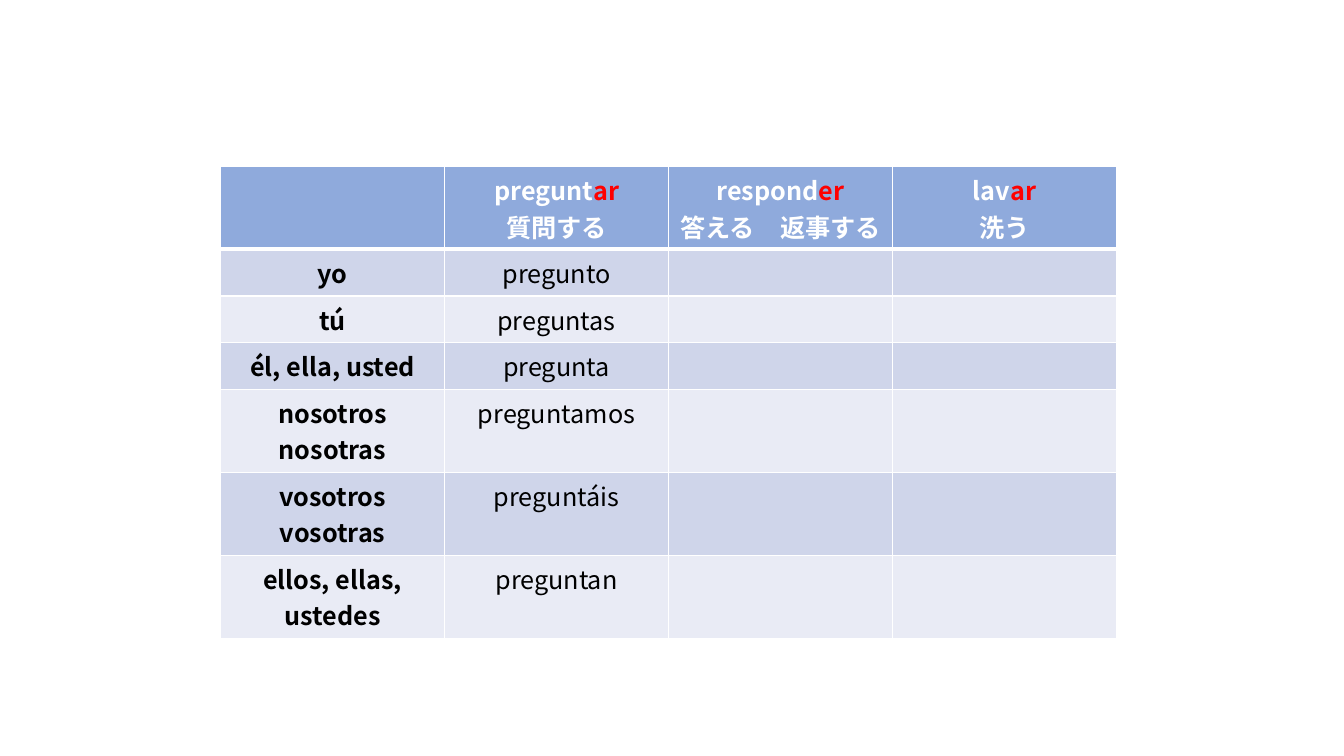
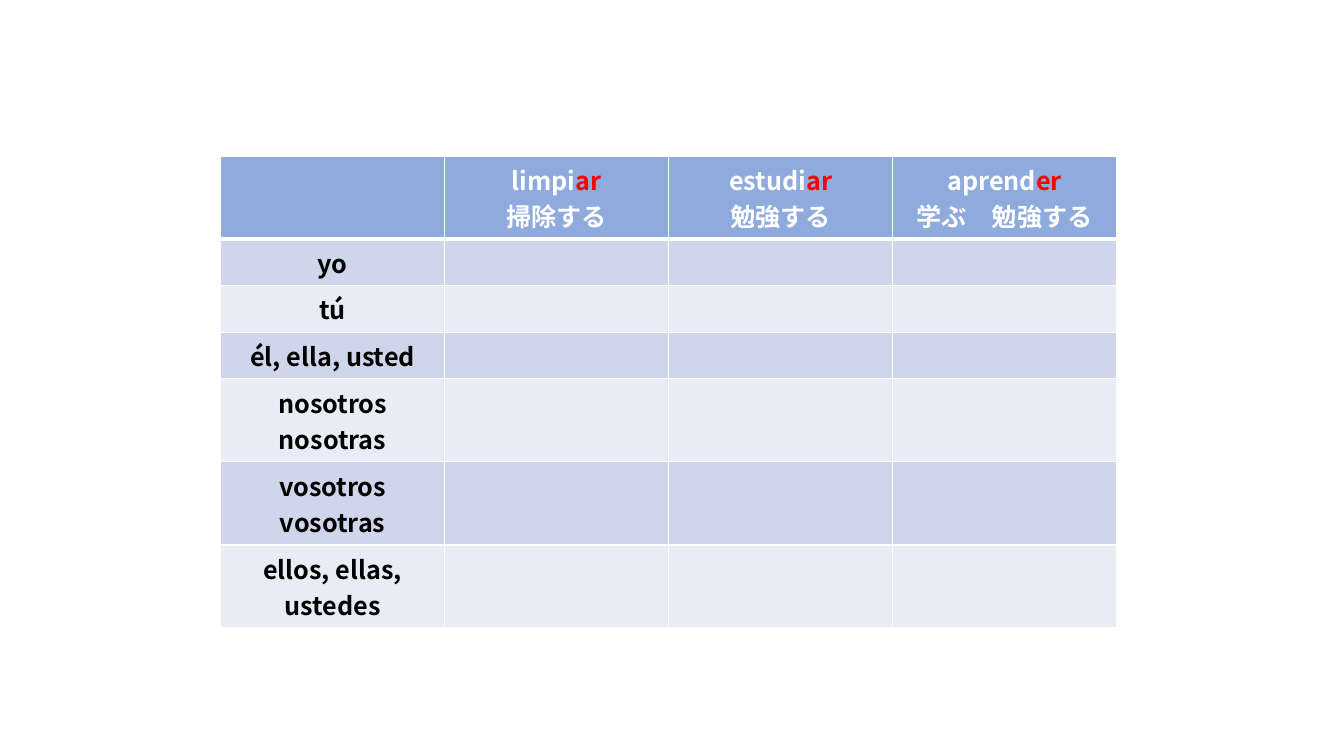
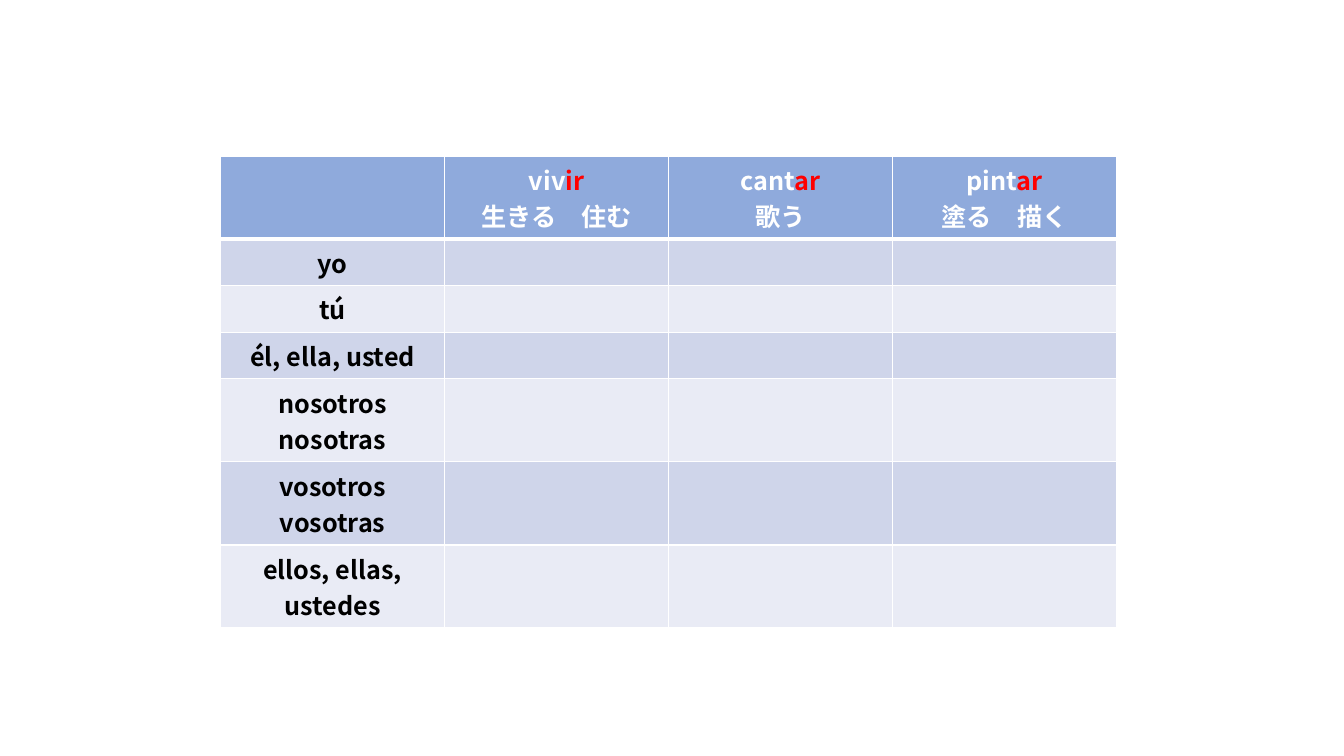
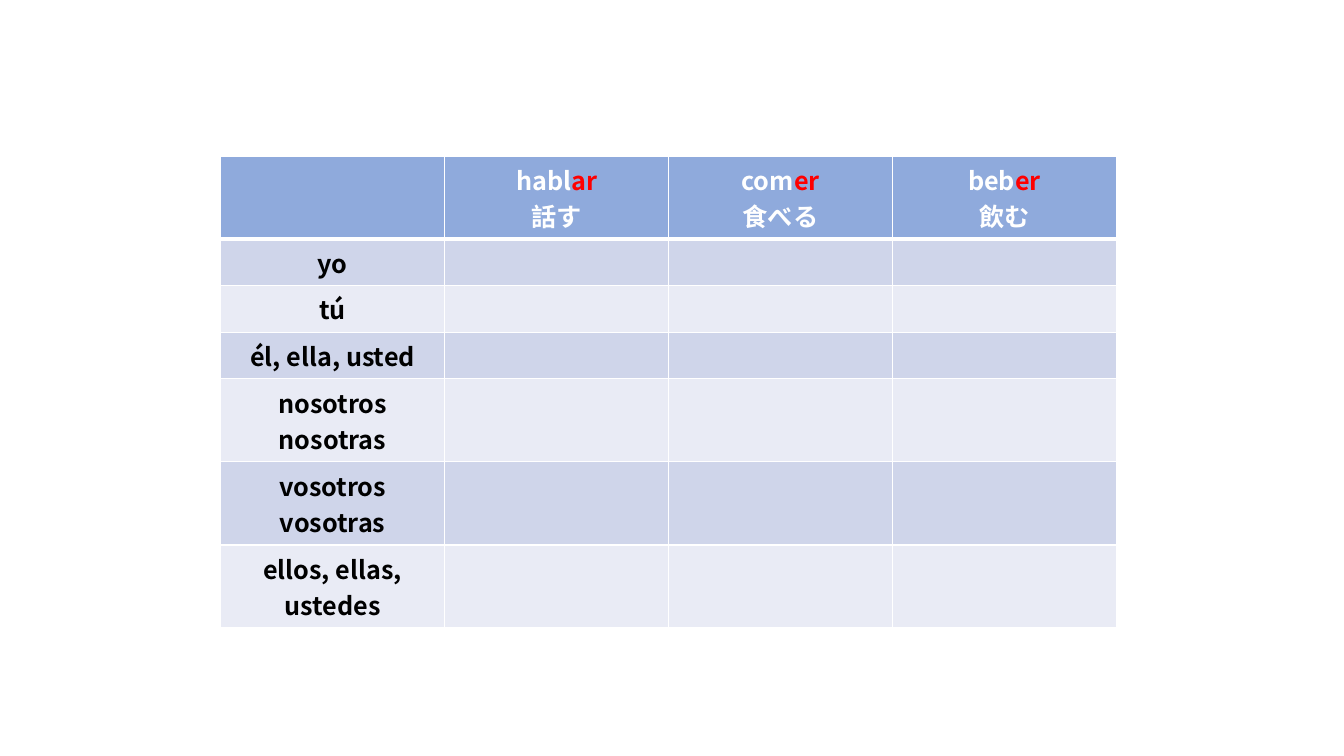
"""Build four Spanish verb conjugation worksheets with Japanese meanings."""
from dataclasses import dataclass

from lxml import etree
from pptx import Presentation
from pptx import util as u
from pptx.dml import color
from pptx.enum import text
from pptx.oxml import ns


@dataclass(frozen=True)
class Theme:
    """Colours, type and line widths shared by all slides."""
    font: str = "Noto Sans CJK JP"
    size: u.Length = u.Pt(18)
    header: str = "8FAADC"
    bands: tuple = ("CFD5EA", "E9EBF5")
    border: str = "FFFFFF"
    thin: u.Length = u.Pt(1)
    thick: u.Length = u.Pt(3)
    light: str = "FFFFFF"
    dark: str = "000000"
    ending: str = "FF0000"


THEME = Theme()
TABLE_LEFT, TABLE_WIDTH, ROW_HEIGHT = u.Cm(5.56), u.Cm(22.58), u.Cm(1.03)
PRONOUNS = [
    ["yo"],
    ["tú"],
    ["él, ella, usted"],
    ["nosotros", "nosotras"],
    ["vosotros", "vosotras"],
    ["ellos, ellas, ustedes"],
]
PREGUNTAR = ["pregunto", "preguntas", "pregunta", "preguntamos", "preguntáis", "preguntan"]
WORKSHEETS = [
    (u.Cm(4.19), [("pregunt", "ar", "質問する"), ("respond", "er", "答える　返事する"),
                  ("lav", "ar", "洗う")], PREGUNTAR),
    (u.Cm(3.93), [("limpi", "ar", "掃除する"), ("estudi", "ar", "勉強する"),
                  ("aprend", "er", "学ぶ　勉強する")], []),
    (u.Cm(3.93), [("viv", "ir", "生きる　住む"), ("cant", "ar", "歌う"),
                  ("pint", "ar", "塗る　描く")], []),
    (u.Cm(3.93), [("habl", "ar", "話す"), ("com", "er", "食べる"),
                  ("beb", "er", "飲む")], []),
]


def add_run(paragraph, words, colour, bold):
    """Add one run, with the font set for Latin and Japanese letters."""
    run = paragraph.add_run()
    run.text = words
    run.font.name = THEME.font
    run.font.size = THEME.size
    run.font.bold = bold
    run.font.color.rgb = color.RGBColor.from_string(colour)
    east_asian = etree.SubElement(run.font._element, ns.qn("a:ea"))
    east_asian.set("typeface", THEME.font)


def write_cell(cell, lines, bold=True):
    """Write centred lines, each a list of (words, colour) runs."""
    frame = cell.text_frame
    for index, line in enumerate(lines):
        paragraph = frame.add_paragraph() if index else frame.paragraphs[0]
        paragraph.alignment = text.PP_ALIGN.CENTER
        for words, colour in line:
            add_run(paragraph, words, colour, bold)


def style_cell(cell, row):
    """Give a cell its borders and the fill of its row."""
    properties = cell._tc.get_or_add_tcPr()
    widths = {
        "a:lnL": THEME.thin,
        "a:lnR": THEME.thin,
        "a:lnT": THEME.thick if row == 1 else THEME.thin,
        "a:lnB": THEME.thick if row == 0 else THEME.thin,
    }
    for tag, width in widths.items():
        line = etree.SubElement(properties, ns.qn(tag), w=str(int(width)))
        fill = etree.SubElement(line, ns.qn("a:solidFill"))
        etree.SubElement(fill, ns.qn("a:srgbClr"), val=THEME.border)
    colour = THEME.bands[(row - 1) % len(THEME.bands)] if row else THEME.header
    cell.fill.solid()
    cell.fill.fore_color.rgb = color.RGBColor.from_string(colour)


def add_conjugation_table(slide, left, top, width, verbs, answers):
    """Place a table of pronouns by verbs, with answers for the first verb."""
    rows, columns = len(PRONOUNS) + 1, len(verbs) + 1
    frame = slide.shapes.add_table(rows, columns, left, top, width, ROW_HEIGHT * rows)
    table = frame.table
    table.first_row = table.horz_banding = False
    for row in range(rows):
        for column in range(columns):
            style_cell(table.cell(row, column), row)
    for column, (stem, ending, meaning) in enumerate(verbs, 1):
        write_cell(table.cell(0, column),
                   [[(stem, THEME.light), (ending, THEME.ending)], [(meaning, THEME.light)]])
    for row, pronouns in enumerate(PRONOUNS, 1):
        write_cell(table.cell(row, 0), [[(pronoun, THEME.dark)] for pronoun in pronouns])
    for row, answer in enumerate(answers, 1):
        write_cell(table.cell(row, 1), [[(answer, THEME.dark)]], bold=False)


def main():
    """Build and save the presentation."""
    presentation = Presentation()
    presentation.slide_width, presentation.slide_height = u.Cm(33.87), u.Cm(19.05)
    for top, verbs, answers in WORKSHEETS:
        slide = presentation.slides.add_slide(presentation.slide_layouts[6])
        add_conjugation_table(slide, TABLE_LEFT, top, TABLE_WIDTH, verbs, answers)
    presentation.save("out.pptx")


if __name__ == "__main__":
    main()
